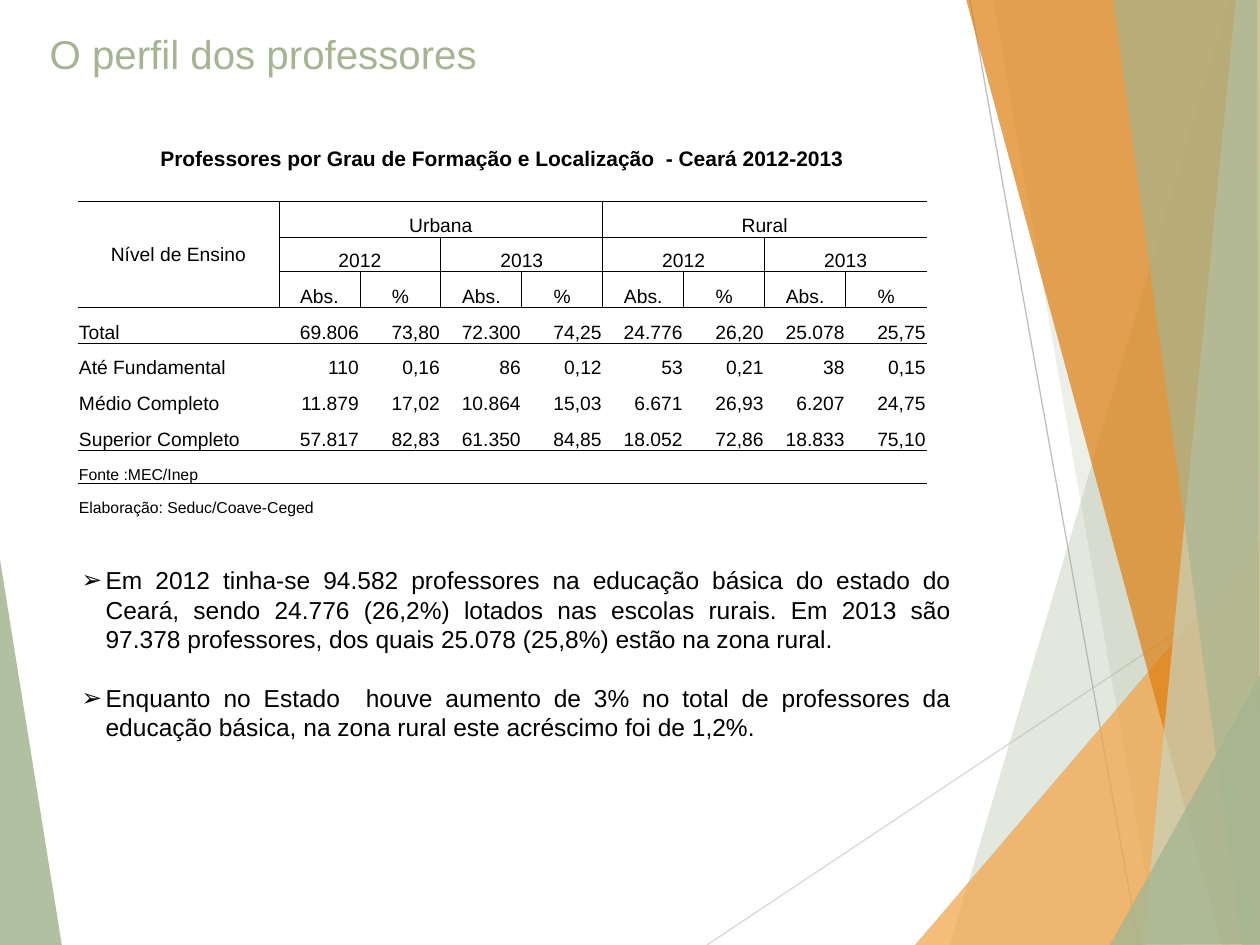
from lxml import etree
from pptx import Presentation
from pptx.dml.color import RGBColor
from pptx.enum.shapes import MSO_CONNECTOR
from pptx.enum.text import MSO_ANCHOR, MSO_AUTO_SIZE, PP_ALIGN
from pptx.oxml.ns import qn
from pptx.util import Emu, Pt

LEFT, MID, RIGHT = PP_ALIGN.LEFT, PP_ALIGN.CENTER, PP_ALIGN.RIGHT
JUST = PP_ALIGN.JUSTIFY
TOP, CENTER, BASE = MSO_ANCHOR.TOP, MSO_ANCHOR.MIDDLE, MSO_ANCHOR.BOTTOM
FIXED = MSO_AUTO_SIZE.NONE
LINE = MSO_CONNECTOR.STRAIGHT
UNIT = 914400 / 126
PLAIN = "{2D5ABB26-0587-4C30-8999-92F81FD0307C}"  # table style without lines

GREEN, BLACK = "A5B592", "000000"

# Background bands: colour, opacity in percent, corners
BANDS = [
    (GREEN, 85, [(-1, 553), (62, 946), (-1, 945)]),
    (GREEN, 30, [(1229, 0), (950, 945), (1262, 946), (1261, 1)]),
    (GREEN, 20, [(993, -1), (1158, 945), (1261, 945), (1261, -1)]),
    ("F3A447", 72, [(915, 945), (1260, 541), (1261, 945)]),
    ("DD7E0E", 70, [(966, -1), (1222, 945), (1261, 944), (1261, -1)]),
    ("C9D3BE", 70, [(1236, -1), (1143, 945), (1261, 945), (1260, -1)]),
    (GREEN, 65, [(1113, -1), (1242, 945), (1260, 945), (1257, -1)]),
    (GREEN, 80, [(1110, 945), (1261, 674), (1261, 944)]),
]

COLS = [201] + [81] * 8
ROWS = [85] + [36, 35, 36] * 2 + [36] + [33] * 2
CAPTION = "Professores por Grau de Formação e Localização  - Ceará 2012-2013"
# Header rows: labels and how many columns each one spans
HEADS = [
    (["Urbana", "Rural"], 4),
    (["2012", "2013"] * 2, 2),
    (["Abs.", "%"] * 4, 1),
]
DATA = [
    "Total|69.806|73,80|72.300|74,25|24.776|26,20|25.078|25,75",
    "Até Fundamental|110|0,16|86|0,12|53|0,21|38|0,15",
    "Médio Completo|11.879|17,02|10.864|15,03|6.671|26,93|6.207|24,75",
    "Superior Completo|57.817|82,83|61.350|84,85|18.052|72,86|18.833|75,10",
]
NOTES = ["Fonte :MEC/Inep", "Elaboração: Seduc/Coave-Ceged"]

POINTS = [
    "Em 2012 tinha-se 94.582 professores na educação básica do estado do "
    "Ceará, sendo 24.776 (26,2%) lotados nas escolas rurais. Em 2013 são "
    "97.378 professores, dos quais 25.078 (25,8%) estão na zona rural.",
    "Enquanto no Estado  houve aumento de 3% no total de professores da "
    "educação básica, na zona rural este acréscimo foi de 1,2%.",
]


def px(n):
    return Emu(round(n * UNIT))


def tint(code):
    return RGBColor.from_string(code)


def ruled(row, col):
    """Tell whether a cell has a line above it and one to its left."""
    above = row in (1, 4, 8) or (row in (2, 3) and col > 0)
    beside = 1 <= row <= 3 and col > 0 and (col - 1) % HEADS[row - 1][1] == 0
    return above, beside


class Deck:
    font = "Arial"

    def __init__(self):
        self.prs = Presentation()
        self.prs.slide_width, self.prs.slide_height = px(1260), px(945)
        self.slide = self.prs.slides.add_slide(self.prs.slide_layouts[1])
        self.shapes = self.slide.shapes

    def style(self, para, size, color=BLACK, align=LEFT, bold=False):
        para.alignment = align
        font = para.font
        font.name, font.size, font.bold = self.font, Pt(size), bold
        font.color.rgb = tint(color)

    def band(self, color, alpha, spots):
        pen = self.shapes.build_freeform(*spots[0], scale=UNIT)
        pen.add_line_segments(spots[1:], close=True)
        shape = pen.convert_to_shape()
        shape.shadow.inherit = False
        shape.line.fill.background()
        shape.fill.solid()
        shape.fill.fore_color.rgb = tint(color)
        clr = shape.fill._xPr.find(".//" + qn("a:srgbClr"))
        etree.SubElement(clr, qn("a:alpha"), val=str(alpha * 1000))

    def line(self, color, *ends):
        rule = self.shapes.add_connector(LINE, *map(px, ends))
        rule.line.color.rgb = tint(color)
        rule.line.width = Pt(0.75)
        etree.SubElement(rule.element.spPr, qn("a:effectLst"))

    def place(self, index, box, anchor):
        """Move a placeholder to its box, in front of what is drawn."""
        shape = self.slide.placeholders[index]
        shape.left, shape.top, shape.width, shape.height = map(px, box)
        self.shapes._spTree.append(shape.element)
        frame = shape.text_frame
        frame.word_wrap, frame.auto_size = True, FIXED
        frame.vertical_anchor = anchor
        return frame

    def title(self, text, box):
        frame = self.place(0, box, CENTER)
        frame.text = text
        self.style(frame.paragraphs[0], 23, GREEN)

    def list(self, items, box):
        frame = self.place(1, box, TOP)
        frame.text = "\n".join(items)
        for para in frame.paragraphs:
            self.style(para, 14, align=JUST)
            para.space_before, para.space_after = Pt(0), Pt(16.8)
            props = para._p.get_or_add_pPr()
            props.set("marL", str(px(24)))
            props.set("indent", str(-px(24)))
            mark = etree.Element(qn("a:buChar"), char="➢")
            props.find(qn("a:defRPr")).addprevious(mark)

    def edge(self, cell, sides):
        """Draw the chosen sides of a cell and leave it unfilled."""
        props = cell._tc.get_or_add_tcPr()
        for side, shown in zip("LRTB", sides):
            if shown:
                rule = etree.SubElement(props, qn("a:ln" + side), w=str(Pt(0.5)))
                fill = etree.SubElement(rule, qn("a:solidFill"))
                etree.SubElement(fill, qn("a:srgbClr"), val=BLACK)
        cell.fill.background()

    def grid(self, left, top):
        size = px(sum(COLS)), px(sum(ROWS))
        frame = self.shapes.add_table(len(ROWS), len(COLS), px(left), px(top), *size)
        table = frame.table
        table.first_row = table.horz_banding = False
        table._tbl.tblPr.find(qn("a:tableStyleId")).text = PLAIN
        for col, wide in zip(table.columns, COLS):
            col.width = px(wide)
        for row, tall in zip(table.rows, ROWS):
            row.height = px(tall)
        for r in range(len(ROWS)):
            for c in range(len(COLS)):
                cell = table.cell(r, c)
                cell.margin_left = cell.margin_right = cell.margin_top = px(1)
                cell.margin_bottom = 0
                cell.vertical_anchor = BASE
                self.style(cell.text_frame.paragraphs[0], 9)
                above, beside = ruled(r, c)
                sides = beside, ruled(r, c + 1)[1] and c < 8, above, ruled(r + 1, c)[0]
                self.edge(cell, sides)
        return table

    def put(self, cell, text, size=11, align=LEFT, bold=False, anchor=BASE):
        cell.text = text
        cell.vertical_anchor = anchor
        self.style(cell.text_frame.paragraphs[0], size, align=align, bold=bold)


def main():
    deck = Deck()

    # Background
    for n, band in enumerate(BANDS):
        deck.band(*band)
        if n == 0:
            deck.line("D9D9D9", 707, 945, 1261, 576)
            deck.line("BFBFBF", 970, 0, 1139, 945)

    # Title and remarks
    deck.title("O perfil dos professores", (37, 21, 659, 64))
    deck.list(POINTS, (69, 559, 895, 221))

    # Table caption and headers
    table = deck.grid(78, 116)
    table.cell(0, 0).merge(table.cell(0, 8))
    deck.put(table.cell(0, 0), CAPTION, 12, MID, True, CENTER)
    table.cell(1, 0).merge(table.cell(3, 0))
    deck.put(table.cell(1, 0), "Nível de Ensino", align=MID, anchor=CENTER)
    for r, (labels, span) in enumerate(HEADS, 1):
        for n, label in enumerate(labels):
            cell = table.cell(r, 1 + n * span)
            if span > 1:
                cell.merge(table.cell(r, (n + 1) * span))
            deck.put(cell, label, align=MID)

    # Table figures and notes
    for r, line in enumerate(DATA, 4):
        for c, text in enumerate(line.split("|")):
            deck.put(table.cell(r, c), text, align=RIGHT if c else LEFT)
    table.cell(9, 0).merge(table.cell(9, 2))
    for r, note in enumerate(NOTES, 8):
        deck.put(table.cell(r, 0), note, 9)

    deck.prs.save("out.pptx")


if __name__ == "__main__":
    main()
